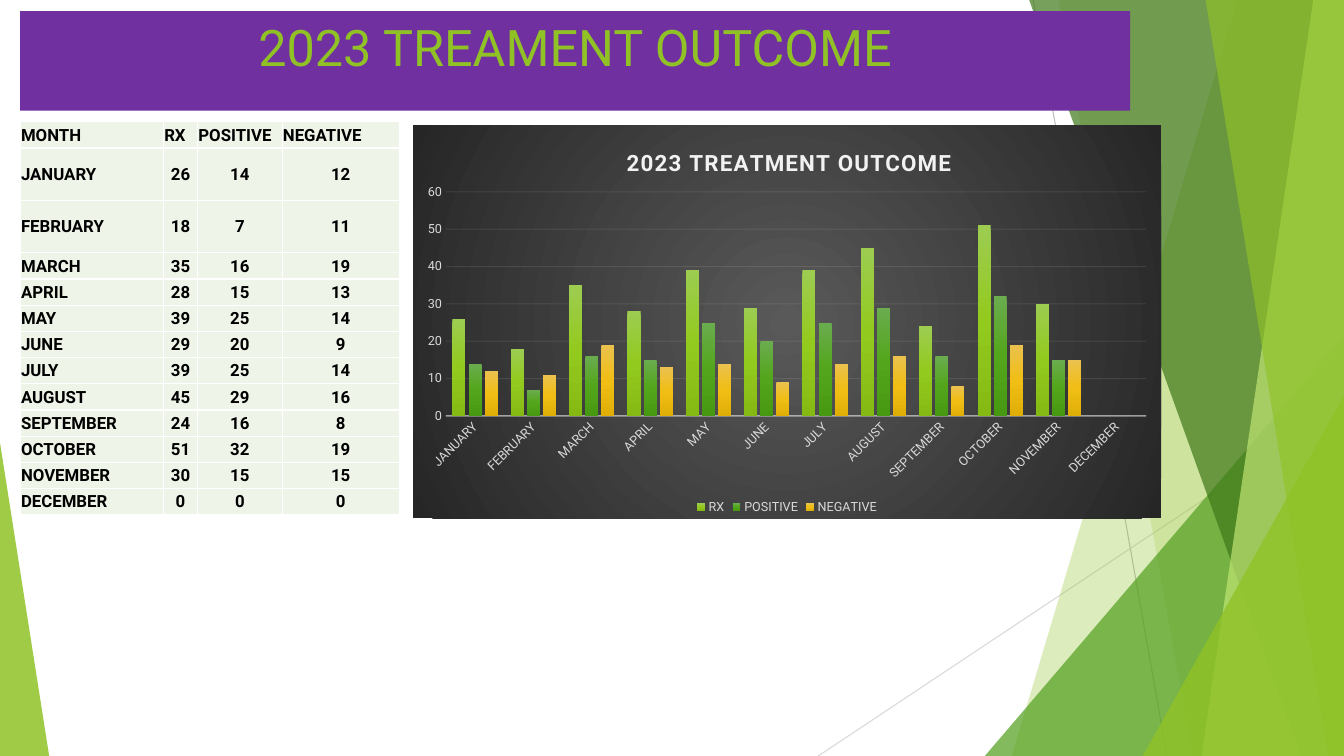
from dataclasses import dataclass

from lxml.etree import SubElement
from pptx import Presentation
from pptx.chart.chart import Chart
from pptx.chart.data import CategoryChartData
from pptx.dml.color import RGBColor
from pptx.enum.chart import XL_CHART_TYPE, XL_LEGEND_POSITION, XL_TICK_MARK
from pptx.enum.shapes import MSO_CONNECTOR, MSO_SHAPE
from pptx.enum.text import MSO_ANCHOR, PP_ALIGN
from pptx.oxml.ns import qn
from pptx.oxml.xmlchemy import BaseOxmlElement
from pptx.slide import Slide
from pptx.table import _Cell
from pptx.util import Cm, Pt

FONT = "Roboto"
WIDTH, HEIGHT, BLEED = 33.87, 19.05, -0.02

BLACK = RGBColor(0x00, 0x00, 0x00)
WHITE = RGBColor(0xFF, 0xFF, 0xFF)
OFF_WHITE = RGBColor(0xF2, 0xF2, 0xF2)
LIGHT_GREY = RGBColor(0xD9, 0xD9, 0xD9)
GREY = RGBColor(0xBF, 0xBF, 0xBF)
DARK_GREY = RGBColor(0x59, 0x59, 0x59)
CHARCOAL = RGBColor(0x26, 0x26, 0x26)
PURPLE = RGBColor(0x70, 0x30, 0xA0)
LIME = RGBColor(0x90, 0xC2, 0x26)
GREEN = RGBColor(0x54, 0xA0, 0x21)
FOREST = RGBColor(0x3F, 0x78, 0x19)
PALE_LIME = RGBColor(0xC0, 0xE4, 0x74)
CELL_FILL = RGBColor(0xEE, 0xF4, 0xE8)


@dataclass
class Ray:
    x1: float
    y1: float
    x2: float
    y2: float
    color: RGBColor


@dataclass
class Panel:
    top_x: float
    bottom_x: float
    color: RGBColor
    opacity: int


@dataclass
class Wedge:
    left: float
    top: float
    width: float
    apex: float
    color: RGBColor
    opacity: int


@dataclass
class Outcome:
    name: str
    values: list[int]
    shades: list[RGBColor]


RAYS = [
    Ray(26.04, 0, 29.41, HEIGHT, GREY),
    Ray(WIDTH, 10.24, 20.62, HEIGHT, LIGHT_GREY),
]
FACETS = [
    Panel(31.19, 25.5, LIME, 30),
    Panel(26.67, 30.05, LIME, 20),
    Wedge(24.82, 8.46, 9.05, 1, GREEN, 72),
    Panel(25.93, 32.79, FOREST, 70),
    Panel(33.1, 30.28, PALE_LIME, 70),
    Panel(30.38, 33.48, LIME, 65),
    Wedge(28.8, 9.98, 5.07, 1, LIME, 80),
    Wedge(0, 11.15, 1.24, 0, LIME, 85),
]
MONTHS = ["JANUARY", "FEBRUARY", "MARCH", "APRIL", "MAY", "JUNE", "JULY",
          "AUGUST", "SEPTEMBER", "OCTOBER", "NOVEMBER", "DECEMBER"]
OUTCOMES = [
    Outcome("RX", [26, 18, 35, 28, 39, 29, 39, 45, 24, 51, 30, 0],
            [RGBColor(0x9D, 0xCC, 0x51), RGBColor(0x93, 0xCA, 0x1E), RGBColor(0x85, 0xBA, 0x14)]),
    Outcome("POSITIVE", [14, 7, 16, 15, 25, 20, 25, 29, 16, 32, 15, 0],
            [RGBColor(0x6B, 0xAC, 0x4F), RGBColor(0x53, 0xA6, 0x1B), RGBColor(0x48, 0x99, 0x12)]),
    Outcome("NEGATIVE", [12, 11, 19, 13, 14, 9, 14, 16, 8, 19, 15, 0],
            [RGBColor(0xEB, 0xC1, 0x4F), RGBColor(0xF0, 0xBE, 0x14), RGBColor(0xE0, 0xAF, 0x07)]),
]
COLUMN_WIDTHS = [3.61, 0.86, 2.13, 2.95]
ROW_HEIGHT = 0.66
TALL_ROWS = (1, 2)


def set_opacity(element: BaseOxmlElement, percent: int) -> None:
    for color in element.iter(qn("a:srgbClr")):
        SubElement(color, qn("a:alpha"), val=str(percent * 1000))


def add_gradient(sp_pr: BaseOxmlElement, shades: list[RGBColor]) -> BaseOxmlElement:
    grad = SubElement(sp_pr, qn("a:gradFill"), rotWithShape="1")
    stops = SubElement(grad, qn("a:gsLst"))
    for i, shade in enumerate(shades):
        stop = SubElement(stops, qn("a:gs"), pos=str(i * 100000 // (len(shades) - 1)))
        SubElement(stop, qn("a:srgbClr"), val=str(shade))
    return grad


def add_layout(layout: BaseOxmlElement, **parts: str) -> None:
    manual = SubElement(layout, qn("c:manualLayout"))
    for tag, val in parts.items():
        SubElement(manual, qn(f"c:{tag}"), val=val)


def draw_ray(s: Slide, ray: Ray) -> None:
    cxn = s.shapes.add_connector(MSO_CONNECTOR.STRAIGHT, Cm(ray.x1), Cm(ray.y1), Cm(ray.x2), Cm(ray.y2))
    cxn.line.color.rgb = ray.color
    cxn.line.width = Pt(0.75)
    SubElement(cxn.element.spPr, qn("a:effectLst"))


def draw_facet(s: Slide, facet: Panel | Wedge) -> None:
    if isinstance(facet, Panel):
        fb = s.shapes.build_freeform(Cm(facet.top_x), Cm(BLEED))
        corners = [(WIDTH, BLEED), (WIDTH, HEIGHT), (facet.bottom_x, HEIGHT)]
        fb.add_line_segments([(Cm(x), Cm(y)) for x, y in corners])
        sp = fb.convert_to_shape()
    else:
        sp = s.shapes.add_shape(MSO_SHAPE.ISOSCELES_TRIANGLE, Cm(facet.left), Cm(facet.top),
                                Cm(facet.width), Cm(HEIGHT - facet.top))
        sp.adjustments[0] = facet.apex
    sp.shadow.inherit = False
    sp.fill.solid()
    sp.fill.fore_color.rgb = facet.color
    set_opacity(sp.element.spPr, facet.opacity)
    sp.line.fill.background()


def draw_title(s: Slide) -> None:
    sp = s.shapes.add_shape(MSO_SHAPE.RECTANGLE, Cm(0.51), Cm(0.28), Cm(27.97), Cm(2.51))
    sp.shadow.inherit = False
    sp.fill.solid()
    sp.fill.fore_color.rgb = PURPLE
    sp.line.fill.background()
    tf = sp.text_frame
    tf.word_wrap = True
    tf.vertical_anchor = MSO_ANCHOR.TOP
    p = tf.paragraphs[0]
    p.alignment = PP_ALIGN.CENTER
    r = p.add_run()
    r.text = "2023 TREAMENT OUTCOME"
    r.font.name, r.font.size, r.font.color.rgb = FONT, Pt(36), LIME


def fill_cell(cell: _Cell, text: str, align: PP_ALIGN) -> None:
    cell.margin_left = cell.margin_right = cell.margin_top = Cm(0.02)
    cell.margin_bottom = 0
    cell.vertical_anchor = MSO_ANCHOR.MIDDLE
    p = cell.text_frame.paragraphs[0]
    p.alignment = align
    r = p.add_run()
    r.text = text
    r.font.name, r.font.size, r.font.bold, r.font.color.rgb = FONT, Pt(12), True, BLACK
    tc_pr = cell._tc.get_or_add_tcPr()
    for side in ("L", "R", "T", "B"):
        ln = SubElement(tc_pr, qn(f"a:ln{side}"), w=str(Pt(1)))
        SubElement(SubElement(ln, qn("a:solidFill")), qn("a:srgbClr"), val=str(WHITE))
    cell.fill.solid()
    cell.fill.fore_color.rgb = CELL_FILL


def draw_table(s: Slide) -> None:
    rows = [["MONTH"] + [o.name for o in OUTCOMES]]
    rows += [[month] + [str(o.values[i]) for o in OUTCOMES] for i, month in enumerate(MONTHS)]
    heights = [ROW_HEIGHT * (2 if i in TALL_ROWS else 1) for i in range(len(rows))]
    tbl = s.shapes.add_table(len(rows), len(COLUMN_WIDTHS), Cm(0.51), Cm(3.07),
                             Cm(sum(COLUMN_WIDTHS)), Cm(sum(heights))).table
    tbl.first_row = tbl.horz_banding = False
    for col, width in zip(tbl.columns, COLUMN_WIDTHS):
        col.width = Cm(width)
    for i, row in enumerate(rows):
        tbl.rows[i].height = Cm(heights[i])
        for j, text in enumerate(row):
            fill_cell(tbl.cell(i, j), text, PP_ALIGN.CENTER if i and j else PP_ALIGN.LEFT)


def style_axes(chart: Chart) -> None:
    cat, val = chart.category_axis, chart.value_axis
    for axis in (cat, val):
        axis.major_tick_mark = axis.minor_tick_mark = XL_TICK_MARK.NONE
        font = axis.tick_labels.font
        font.name, font.size, font.color.rgb = FONT, Pt(9), LIGHT_GREY
    cat._element.find(qn("c:txPr")).find(qn("a:bodyPr")).set("rot", "-2700000")
    val.minimum_scale, val.maximum_scale, val.major_unit = 0, 60, 10
    val.format.line.fill.background()
    grid = val.major_gridlines.format.line
    for line, width in ((cat.format.line, 1), (grid, 0.75)):
        line.color.rgb = OFF_WHITE
        line.width = Pt(width)
    set_opacity(cat._element.find(qn("c:spPr")), 54)
    set_opacity(val._element.find(qn("c:majorGridlines")), 10)


def draw_chart(s: Slide) -> None:
    data = CategoryChartData()
    data.categories = MONTHS
    for o in OUTCOMES:
        data.add_series(o.name, o.values)
    chart = s.shapes.add_chart(XL_CHART_TYPE.COLUMN_CLUSTERED, Cm(10.41), Cm(3.15), Cm(18.85), Cm(9.91), data).chart
    chart.font.name, chart.font.size, chart.font.color.rgb = FONT, Pt(10), BLACK
    chart.has_title = True
    r = chart.chart_title.text_frame.paragraphs[0].add_run()
    r.text = "2023 TREATMENT OUTCOME"
    r.font.name, r.font.size, r.font.bold, r.font.color.rgb = FONT, Pt(16), True, OFF_WHITE
    r.font._element.set("spc", "100")
    chart.chart_title.include_in_layout = False
    chart.has_legend = True
    chart.legend.position = XL_LEGEND_POSITION.BOTTOM
    chart.legend.include_in_layout = False
    font = chart.legend.font
    font.name, font.size, font.color.rgb = FONT, Pt(9), LIGHT_GREY
    style_axes(chart)

    plot = chart.plots[0]
    plot.gap_width, plot.overlap, plot.vary_by_categories = 100, -24, False
    for series, o in zip(plot.series, OUTCOMES):
        grad = add_gradient(series._element.get_or_add_spPr(), o.shades)
        SubElement(grad, qn("a:lin"), ang="5400000", scaled="0")

    body = chart.element.find(qn("c:chart"))
    title, plot_area = body.find(qn("c:title")), body.find(qn("c:plotArea"))
    for parent, index in ((title, 1), (plot_area, 0)):
        for old in parent.findall(qn("c:layout")):
            parent.remove(old)
        parent.insert(index, SubElement(parent, qn("c:layout")))
    add_layout(title[1], xMode="edge", yMode="edge", x="0.28", y="0.05")
    add_layout(plot_area[0], layoutTarget="inner", xMode="edge", yMode="edge", x="0.044", y="0.17", w="0.936", h="0.57")

    sp_pr = SubElement(chart.element, qn("c:spPr"))
    body.addnext(sp_pr)
    center = SubElement(add_gradient(sp_pr, [DARK_GREY, CHARCOAL]), qn("a:path"), path="circle")
    SubElement(center, qn("a:fillToRect"), l="50000", t="50000", r="50000", b="50000")
    SubElement(SubElement(sp_pr, qn("a:ln")), qn("a:noFill"))


def main() -> None:
    prs = Presentation()
    prs.slide_width, prs.slide_height = Cm(WIDTH), Cm(HEIGHT)
    s = prs.slides.add_slide(prs.slide_layouts[6])
    for ray in RAYS:
        draw_ray(s, ray)
    for facet in FACETS:
        draw_facet(s, facet)
    draw_title(s)
    draw_table(s)
    draw_chart(s)
    prs.save("out.pptx")


if __name__ == "__main__":
    main()
